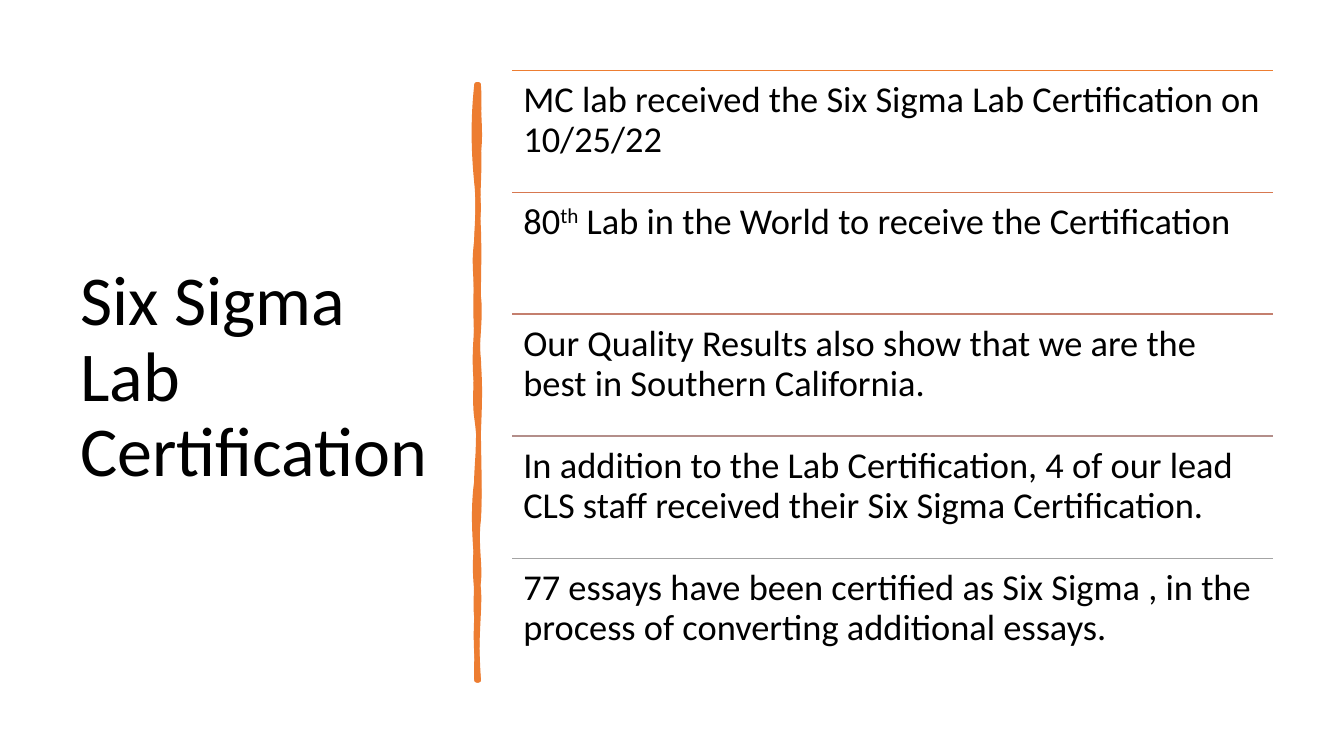
from copy import deepcopy
from dataclasses import dataclass

from lxml.etree import SubElement
from pptx import Presentation
from pptx.dml.color import RGBColor
from pptx.enum.shapes import MSO_CONNECTOR
from pptx.enum.text import MSO_ANCHOR, MSO_AUTO_SIZE, PP_ALIGN
from pptx.oxml.ns import qn
from pptx.util import Cm, Pt


@dataclass(frozen=True)
class Theme:
    font: str = "Calibri"
    text: str = "000000"
    background: str = "FFFFFF"
    accent: str = "ED7D31"
    rules: tuple = ("ED7D31", "D77850", "C47F6E", "B38E8A", "A4A4A4")
    title_size: float = 50
    body_size: float = 26
    rule_width: float = 1
    brush_width: float = 3.25


@dataclass(frozen=True)
class Box:
    left: float
    top: float
    width: float
    height: float

    def lengths(self):
        return Cm(self.left), Cm(self.top), Cm(self.width), Cm(self.height)


THEME = Theme()
TITLE = "Six Sigma Lab Certification"
# Each statement is a list of (text, superscript) runs.
STATEMENTS = [
    [("MC lab received the Six Sigma Lab Certification on 10/25/22", False)],
    [("80", False), ("th", True),
     (" Lab in the World to receive the Certification", False)],
    [("Our Quality Results also show that we are the best in Southern California.", False)],
    [("In addition to the Lab Certification, 4 of our lead CLS staff received "
      "their Six Sigma Certification.", False)],
    [("77 essays have been certified as Six Sigma , in the process of converting "
      "additional essays.", False)],
]

# Cubic curves down the right edge and up the left edge, in hundredths of an
# inch from the top left of the stroke: two handles, then the end point.
BRUSH_START = (2, 0)
BRUSH_OUTLINES = [
    [(4, 25, 0, 43, 2, 62), (4, 81, 0, 114, 2, 142), (3, 170, 2, 190, 2, 210),
     (2, 230, 0, 257, 2, 272), (3, 287, 0, 313, 2, 352), (3, 391, 3, 411, 2, 426),
     (0, 441, -1, 481, 2, 500), (4, 518, -2, 558, 2, 591), (1, 591, 1, 591, 0, 591),
     (-1, 574, 2, 545, 0, 529), (-2, 514, 1, 494, 0, 473), (-2, 452, -4, 420, 0, 393),
     (3, 367, 3, 352, 0, 331), (-3, 311, 1, 280, 0, 251), (-2, 222, 0, 187, 0, 166),
     (-1, 144, 3, 127, 0, 98), (-3, 68, -4, 36, 0, 0), (0, 0, 1, 0, 2, 0)],
    [(1, 26, 5, 46, 2, 68), (-2, 90, 2, 103, 2, 124), (1, 145, -2, 188, 2, 210),
     (5, 231, -1, 259, 2, 278), (4, 297, 3, 322, 2, 346), (0, 370, 4, 407, 2, 432),
     (-1, 456, 4, 477, 2, 494), (-1, 511, 0, 556, 2, 591), (1, 591, 1, 591, 0, 591),
     (2, 574, -2, 560, 0, 529), (2, 499, -4, 491, 0, 455), (3, 420, -1, 410, 0, 387),
     (1, 365, 4, 343, 0, 302), (-4, 261, 1, 253, 0, 216), (-1, 179, -3, 178, 0, 154),
     (2, 129, 1, 106, 0, 80), (-2, 53, 1, 27, 0, 0), (1, 0, 1, 0, 2, 0)],
]


def colour(value):
    return RGBColor.from_string(value)


def add_span(para, text, size, superscript=False):
    span = para.add_run()
    span.text = text
    span.font.name = THEME.font
    span.font.size = Pt(size)
    span.font.color.rgb = colour(THEME.text)
    if superscript:
        span.font._element.set("baseline", "30000")


def place_title(page, box):
    title = page.shapes.title
    title.left, title.top, title.width, title.height = box.lengths()
    frame = title.text_frame
    frame.auto_size = MSO_AUTO_SIZE.NONE
    frame.word_wrap = True
    frame.vertical_anchor = MSO_ANCHOR.MIDDLE
    para = frame.paragraphs[0]
    para.alignment = PP_ALIGN.LEFT
    para.line_spacing = 0.9
    add_span(para, TITLE, THEME.title_size)


def curve_segments(contour, curves):
    """Turn the straight segments of a contour into the given cubic curves."""
    for segment, curve in zip(contour.findall(qn("a:lnTo")), curves):
        segment.tag = qn("a:cubicBezTo")
        segment.remove(segment[0])
        for x, y in zip(curve[::2], curve[1::2]):
            SubElement(segment, qn("a:pt"), x=str(x), y=str(y))


def draw_brush_stroke(page, left, top):
    builder = page.shapes.build_freeform(*BRUSH_START, scale=Cm(0.0254))
    builder.add_line_segments([curve[4:] for curve in BRUSH_OUTLINES[0]], close=True)
    stroke = builder.convert_to_shape(Cm(left), Cm(top))
    edge = next(stroke._element.iter(qn("a:path")))
    body = deepcopy(edge)
    edge.addnext(body)
    edge.set("fill", "none")
    for contour, curves in zip((edge, body), BRUSH_OUTLINES):
        curve_segments(contour, curves)
    stroke.shadow.inherit = False
    stroke.fill.solid()
    stroke.fill.fore_color.rgb = colour(THEME.accent)
    stroke.line.color.rgb = colour(THEME.accent)
    stroke.line.width = Pt(THEME.brush_width)


def draw_statement(shapes, box, spans, rule_colour):
    left, top, width, height = box.lengths()
    rule = shapes.add_connector(MSO_CONNECTOR.STRAIGHT, left, top, left + width, top)
    rule.line.color.rgb = colour(rule_colour)
    rule.line.width = Pt(THEME.rule_width)
    SubElement(rule._element.spPr, qn("a:effectLst"))

    frame = shapes.add_textbox(left, top, width, height).text_frame
    frame.word_wrap = True
    frame.vertical_anchor = MSO_ANCHOR.TOP
    frame.margin_left = frame.margin_right = Cm(0.28)
    frame.margin_top = frame.margin_bottom = Cm(0.28)
    para = frame.paragraphs[0]
    para.line_spacing = 0.9
    for text, superscript in spans:
        add_span(para, text, THEME.body_size, superscript)


def draw_statements(page, box):
    group = page.shapes.add_group_shape()
    row_height = box.height / len(STATEMENTS)
    for index, (spans, rule_colour) in enumerate(zip(STATEMENTS, THEME.rules)):
        row = Box(box.left, box.top + index * row_height, box.width, row_height)
        draw_statement(group.shapes, row, spans, rule_colour)


def main():
    deck = Presentation()
    deck.slide_width, deck.slide_height = Cm(33.87), Cm(19.05)
    page = deck.slides.add_slide(deck.slide_layouts[5])
    page.background.fill.solid()
    page.background.fill.fore_color.rgb = colour(THEME.background)
    place_title(page, Box(1.77, 1.79, 9.5, 15.5))
    draw_brush_stroke(page, 12.01, 2.13)
    draw_statements(page, Box(12.91, 1.77, 19.16, 15.37))
    deck.save("out.pptx")


if __name__ == "__main__":
    main()
